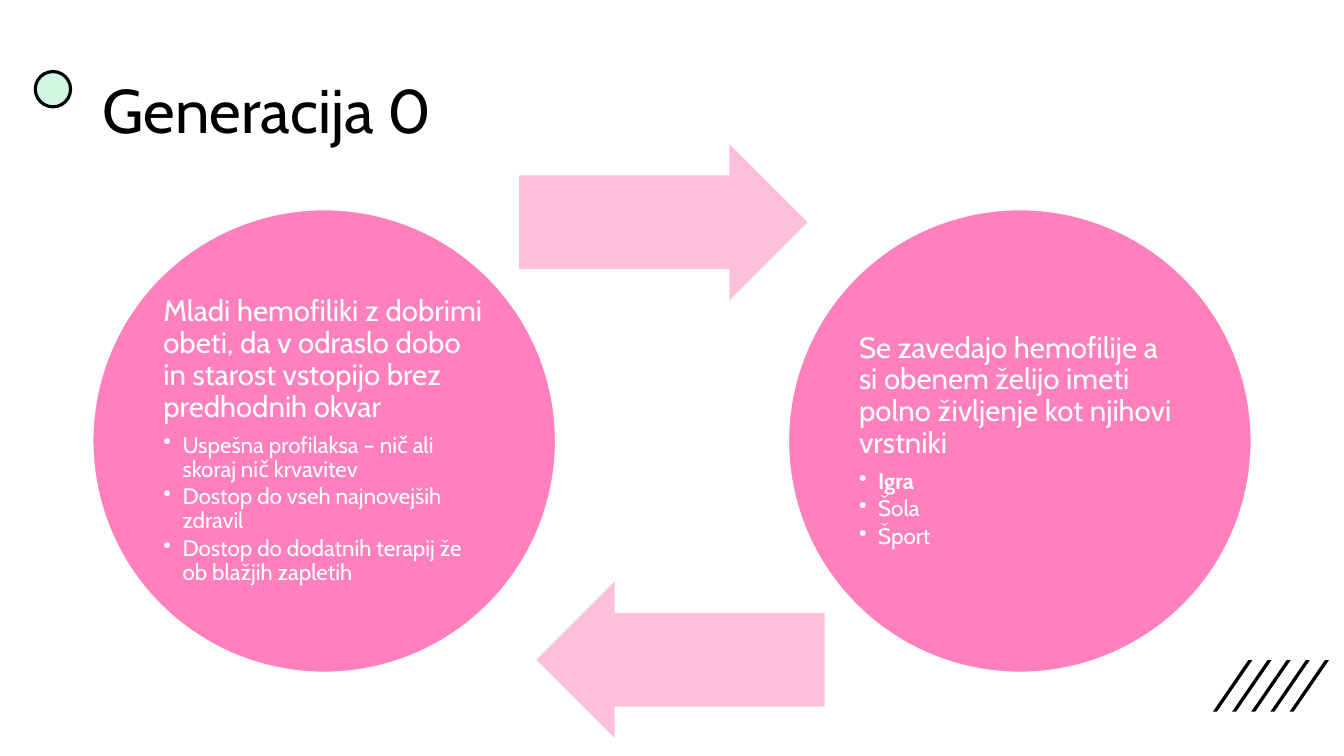
"""Build the "Generacija 0" slide: two circles joined by a cycle of arrows."""
import pptx
import pptx.dml.color
import pptx.enum.shapes
import pptx.enum.text
import pptx.oxml.ns
import pptx.util
from lxml import etree

Inches = pptx.util.Inches
Pt = pptx.util.Pt
RGBColor = pptx.dml.color.RGBColor
SHAPES = pptx.enum.shapes.MSO_SHAPE

BLACK = RGBColor(0x00, 0x00, 0x00)
WHITE = RGBColor(0xFF, 0xFF, 0xFF)
MINT = RGBColor(0xCF, 0xF7, 0xE1)
PINK = RGBColor(0xFF, 0x80, 0xBD)
PALE_PINK = RGBColor(0xFF, 0xC0, 0xDB)
FONT = "Cabin"

TITLE = "Generacija 0"
CIRCLES = [
    (0.92, "Mladi hemofiliki z dobrimi obeti, da v odraslo dobo in starost vstopijo brez predhodnih okvar",
     [("Uspešna profilaksa – nič ali skoraj nič krvavitev", False),
      ("Dostop do vseh najnovejših zdravil", False),
      ("Dostop do dodatnih terapij že ob blažjih zapletih", False)]),
    (7.82, "Se zavedajo hemofilije a si obenem želijo imeti polno življenje kot njihovi vrstniki",
     [("Igra", True), ("Šola", False), ("Šport", False)]),
]
ARROWS = [(5.15, 1.43, 0), (5.32, 5.77, 180)]

CIRCLE_TOP, CIRCLE_SIZE = 2.08, 4.59
TEXT_INSET = 0.67
STRIPE_COUNT, STRIPE_LEFT, STRIPE_STEP = 5, 12.03, 0.19
STRIPE_TOP, STRIPE_BOTTOM = 6.55, 7.06
STRIPE_WIDTH, STRIPE_SLANT = 0.04, 0.35


def paint(shape, fill, line=None, width=1):
    shape.shadow.inherit = False
    shape.fill.solid()
    shape.fill.fore_color.rgb = fill
    if line is None:
        shape.line.fill.background()
    else:
        shape.line.color.rgb = line
        shape.line.width = Pt(width)


def add_preset(slide, preset, left, top, width, height):
    return slide.shapes.add_shape(preset, Inches(left), Inches(top), Inches(width), Inches(height))


def add_text_frame(slide, left, top, width, height):
    frame = slide.shapes.add_textbox(Inches(left), Inches(top), Inches(width), Inches(height)).text_frame
    frame.word_wrap = True
    frame.vertical_anchor = pptx.enum.text.MSO_ANCHOR.MIDDLE
    return frame


def write(paragraph, text, size, color, bold=False, after=0):
    paragraph.line_spacing = 0.9
    paragraph.space_after = Pt(after)
    run = paragraph.add_run()
    run.text = text
    run.font.name = FONT
    run.font.size = Pt(size)
    run.font.bold = bold
    run.font.color.rgb = color


def add_bullet(paragraph):
    properties = paragraph._p.get_or_add_pPr()
    properties.set("marL", str(Inches(0.19)))
    properties.set("indent", str(-Inches(0.19)))
    etree.SubElement(properties, pptx.oxml.ns.qn("a:buChar")).set("char", "•")


def add_stripes(slide):
    for index in range(STRIPE_COUNT):
        left = STRIPE_LEFT + index * STRIPE_STEP
        top_left = left + STRIPE_SLANT
        corners = [(left, STRIPE_BOTTOM), (top_left, STRIPE_TOP), (top_left + STRIPE_WIDTH, STRIPE_TOP)]
        outline = slide.shapes.build_freeform(
            Inches(left + STRIPE_WIDTH), Inches(STRIPE_BOTTOM))
        outline.add_line_segments([(Inches(x), Inches(y)) for x, y in corners], close=True)
        paint(outline.convert_to_shape(), BLACK)


def add_circle(slide, left, heading, points):
    circle = add_preset(slide, SHAPES.OVAL, left, CIRCLE_TOP, CIRCLE_SIZE, CIRCLE_SIZE)
    paint(circle, PINK, WHITE)
    side = CIRCLE_SIZE - 2 * TEXT_INSET
    frame = add_text_frame(slide, left + TEXT_INSET, CIRCLE_TOP + TEXT_INSET, side, side)
    frame.margin_left = frame.margin_right = Inches(0.03)
    frame.margin_top = frame.margin_bottom = Inches(0.03)
    write(frame.paragraphs[0], heading, 21, WHITE, after=7.35)
    for point, bold in points:
        paragraph = frame.add_paragraph()
        write(paragraph, point, 16, WHITE, bold, after=2.4)
        add_bullet(paragraph)


def add_arrow(slide, left, top, rotation):
    arrow = add_preset(slide, SHAPES.RIGHT_ARROW, left, top, 2.86, 1.55)
    arrow.adjustments[0] = 0.6
    arrow.adjustments[1] = 0.5
    arrow.rotation = rotation
    paint(arrow, PALE_PINK)


def main():
    deck = pptx.Presentation()
    deck.slide_width, deck.slide_height = Inches(13.33), Inches(7.5)
    slide = deck.slides.add_slide(deck.slide_layouts[6])
    add_stripes(slide)
    paint(add_preset(slide, SHAPES.OVAL, 0.35, 0.71, 0.35, 0.35), MINT, BLACK, 2.25)
    title = add_text_frame(slide, 0.92, 0.4, 11.5, 1.45)
    write(title.paragraphs[0], TITLE, 44, BLACK)
    for circle, arrow in zip(CIRCLES, ARROWS):
        add_circle(slide, *circle)
        add_arrow(slide, *arrow)
    deck.save("out.pptx")


if __name__ == "__main__":
    main()
